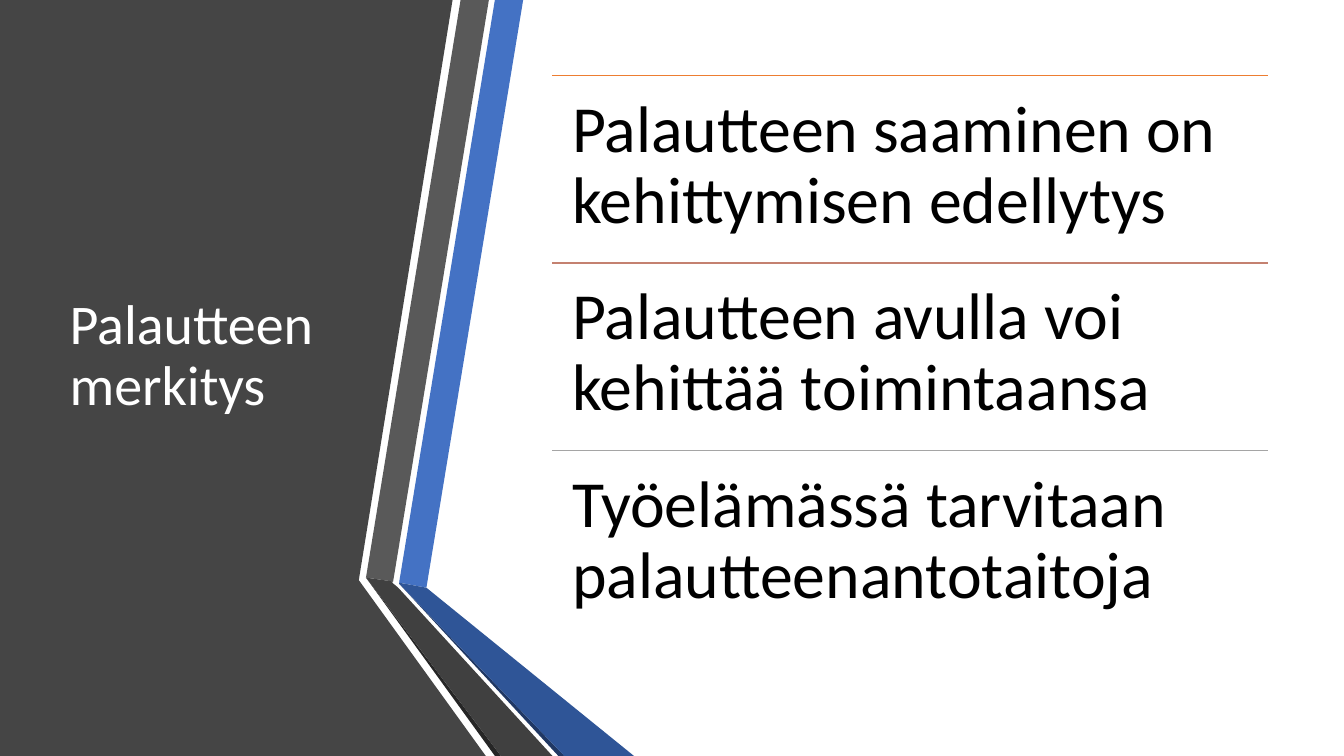
from lxml import etree
from pptx import Presentation
from pptx.dml.color import RGBColor
from pptx.enum.shapes import MSO_CONNECTOR
from pptx.enum.text import MSO_ANCHOR, MSO_AUTO_SIZE, PP_ALIGN
from pptx.oxml.ns import qn
from pptx.util import Pt

STRAIGHT = MSO_CONNECTOR.STRAIGHT
TOP, MIDDLE = MSO_ANCHOR.TOP, MSO_ANCHOR.MIDDLE
LEFT = PP_ALIGN.LEFT
NO_AUTOFIT = MSO_AUTO_SIZE.NONE

WHITE = RGBColor(0xFF, 0xFF, 0xFF)
BLACK = RGBColor(0x00, 0x00, 0x00)
CHARCOAL = RGBColor(0x45, 0x45, 0x45)
GRAY = RGBColor(0x59, 0x59, 0x59)
DARK_GRAY = RGBColor(0x40, 0x40, 0x40)
DEEP_GRAY = RGBColor(0x26, 0x26, 0x26)
BLUE = RGBColor(0x44, 0x72, 0xC4)
DARK_BLUE = RGBColor(0x2F, 0x55, 0x97)
NAVY = RGBColor(0x20, 0x38, 0x64)
ORANGE = RGBColor(0xED, 0x7D, 0x31)
ROSE = RGBColor(0xC4, 0x81, 0x70)
SILVER = RGBColor(0xA5, 0xA5, 0xA5)

SLIDE_WIDTH, SLIDE_HEIGHT = 960, 540
CONTENT_TOP, CONTENT_HEIGHT = 54, 401.76
STATEMENT_LEFT, STATEMENT_WIDTH = 394.56, 511.2


def write_text(holder, text, *, size, color, anchor, inset=None):
    """Fill a text shape with one left-aligned Calibri paragraph."""
    frame = holder.text_frame
    frame.word_wrap = True
    frame.auto_size = NO_AUTOFIT
    frame.vertical_anchor = anchor
    if inset is not None:
        frame.margin_left = frame.margin_right = Pt(inset)
        frame.margin_top = frame.margin_bottom = Pt(inset)
    paragraph = frame.paragraphs[0]
    paragraph.alignment = LEFT
    paragraph.line_spacing = 0.9
    run = paragraph.add_run()
    run.text = text
    run.font.name = "Calibri"
    run.font.size = Pt(size)
    run.font.color.rgb = color


presentation = Presentation()
presentation.slide_width = Pt(SLIDE_WIDTH)
presentation.slide_height = Pt(SLIDE_HEIGHT)
slide = presentation.slides.add_slide(presentation.slide_layouts[5])

# Side panel and folded ribbons, from back to front
panels = [
    (CHARCOAL, [(0, 0), (323.3, 0), (256.3, 414.4), (347, 540), (0, 540)]),
    (BLUE, [(285.1, 416.2), (304.6, 419.8), (373.7, 0), (353.5, 0)]),
    (GRAY, [(349.2, 0), (329, 0), (261.4, 412.6), (280.8, 415.4)]),
    (DEEP_GRAY, [(261.4, 412.6), (353.5, 540), (357.8, 540)]),
    (NAVY, [(285.1, 416.9), (398.9, 540), (403.2, 540)]),
    (DARK_BLUE, [(285.1, 416.9), (403.2, 540), (452.9, 540),
                 (304.6, 419.8), (285.1, 416.2)]),
    (DARK_GRAY, [(394.6, 540), (284.4, 419.8), (280.1, 416.2),
                 (280.8, 415.4), (261.4, 412.6), (357.8, 540)]),
]
for color, corners in panels:
    points = [(Pt(x), Pt(y)) for x, y in corners]
    outline = slide.shapes.build_freeform(*points[0])
    outline.add_line_segments(points[1:], close=True)
    panel = outline.convert_to_shape()
    panel.shadow.inherit = False
    panel.fill.solid()
    panel.fill.fore_color.rgb = color
    panel.line.fill.background()

# Title, brought in front of the side panel
title = slide.shapes.title
title.left, title.top = Pt(42.5), Pt(CONTENT_TOP)
title.width, title.height = Pt(218.9), Pt(CONTENT_HEIGHT)
write_text(title, "Palautteen merkitys", size=40, color=WHITE, anchor=MIDDLE)
title.element.getparent().append(title.element)

# Statements, each under its own rule
statements = [
    ("Palautteen saaminen on kehittymisen edellytys", ORANGE),
    ("Palautteen avulla voi kehittää toimintaansa", ROSE),
    ("Työelämässä tarvitaan palautteenantotaitoja", SILVER),
]
row_height = CONTENT_HEIGHT / len(statements)
for row, (statement, rule_color) in enumerate(statements):
    top = Pt(CONTENT_TOP + row * row_height)
    rule = slide.shapes.add_connector(
        STRAIGHT, Pt(STATEMENT_LEFT), top,
        Pt(STATEMENT_LEFT + STATEMENT_WIDTH), top)
    rule.line.color.rgb = rule_color
    rule.line.width = Pt(1)
    etree.SubElement(rule.element.spPr, qn("a:effectLst"))
    statement_box = slide.shapes.add_textbox(
        Pt(STATEMENT_LEFT), top, Pt(STATEMENT_WIDTH), Pt(row_height))
    write_text(statement_box, statement, size=47, color=BLACK, anchor=TOP,
               inset=14.1)

presentation.save("out.pptx")
